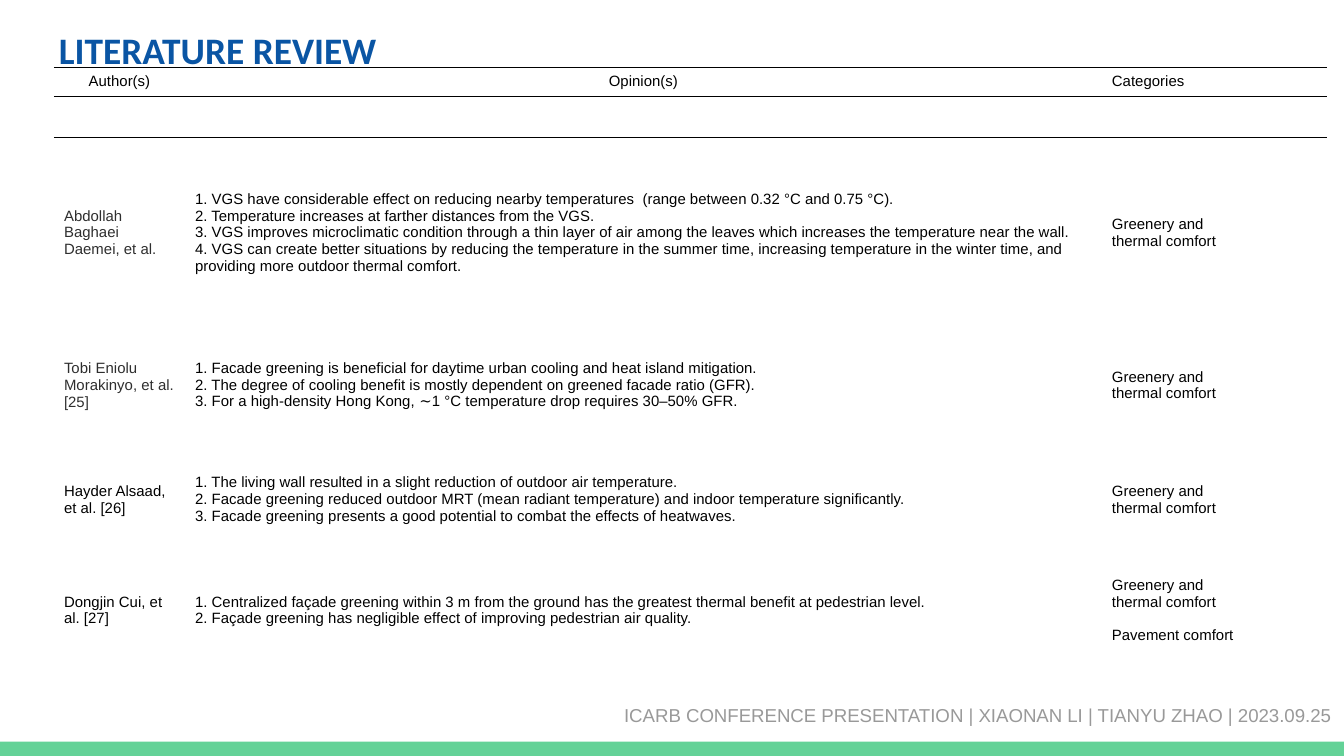
"""Build the literature review slide with its table of authors and opinions."""
import lxml.etree
import pptx
import pptx.dml.color
import pptx.enum.shapes
import pptx.enum.text
import pptx.oxml.ns
import pptx.util

Pt = pptx.util.Pt
Color = pptx.dml.color.RGBColor
Align = pptx.enum.text.PP_ALIGN
Anchor = pptx.enum.text.MSO_ANCHOR
qn = pptx.oxml.ns.qn

BLACK = Color(0x00, 0x00, 0x00)
DARK = Color(0x2E, 0x2E, 0x2E)
BLUE = Color(0x0A, 0x55, 0xA4)
GRAY = Color(0x99, 0x99, 0x99)
GREEN = Color(0x63, 0xD2, 0x97)

COMFORT = ["Greenery and", "thermal comfort"]
HEADS = [("Author(s)", Align.CENTER), ("Opinion(s)", Align.CENTER), ("Categories", Align.LEFT)]
WIDTHS = [70.2, 491.2, 120.6]
HEIGHTS = [15.6, 20.4, 102.2, 61.2, 61.2, 57.6]
RULES = [(0.5, 0.5), (0.5, 0.75), (0.75, 0)]
STUDIES = [
    ("Abdollah Baghaei Daemei, et al.", DARK, [
        "1. VGS have considerable effect on reducing nearby temperatures  (range between 0.32 °C and 0.75 °C).",
        "2. Temperature increases at farther distances from the VGS.",
        "3. VGS improves microclimatic condition through a thin layer of air among the leaves "
        "which increases the temperature near the wall.",
        "4. VGS can create better situations by reducing the temperature in the summer time, "
        "increasing temperature in the winter time, and providing more outdoor thermal comfort.",
    ]),
    ("Tobi Eniolu Morakinyo, et al. [25]", DARK, [
        "1. Facade greening is beneficial for daytime urban cooling and heat island mitigation.",
        "2. The degree of cooling benefit is mostly dependent on greened facade ratio (GFR).",
        [("3. For a high-density Hong Kong, ", "Arial"), ("∼", "Cambria"),
         ("1 °C temperature drop requires 30–50% GFR.", "Arial")],
    ]),
    ("Hayder Alsaad, et al. [26]", BLACK, [
        "1. The living wall resulted in a slight reduction of outdoor air temperature.",
        "2. Facade greening reduced outdoor MRT (mean radiant temperature) and indoor temperature significantly.",
        "3. Facade greening presents a good potential to combat the effects of heatwaves.",
    ]),
    ("Dongjin Cui, et al. [27]", BLACK, [
        "1. Centralized façade greening within 3 m from the ground has the greatest thermal benefit "
        "at pedestrian level.",
        "2. Façade greening has negligible effect of improving pedestrian air quality.",
    ]),
]


class Page:
    """Holds the text style and the current slide."""

    def __init__(self, slide, font="Arial", size=8):
        self.slide, self.font, self.size = slide, font, size

    def put(self, frame, lines, color=BLACK, align=Align.LEFT, size=None, font=None, bold=False):
        """Set each line as a paragraph, run by run."""
        for i, line in enumerate(lines):
            para = frame.add_paragraph() if i else frame.paragraphs[0]
            para.alignment = align
            pairs = [(line, font or self.font)] if isinstance(line, str) else line
            for text, face in pairs:
                run = para.add_run()
                run.text = text
                run.font.name, run.font.size = face, Pt(size or self.size)
                run.font.bold, run.font.color.rgb = bold, color

    def text(self, x, y, w, h, line, **style):
        """Add a text box with one line."""
        frame = self.slide.shapes.add_textbox(Pt(x), Pt(y), Pt(w), Pt(h)).text_frame
        frame.word_wrap = True
        frame.margin_left = frame.margin_right = frame.margin_top = frame.margin_bottom = Pt(7.2)
        self.put(frame, [line], **style)

    def bar(self, x, y, w, h, color):
        """Add a plain filled bar."""
        kind = pptx.enum.shapes.MSO_SHAPE.RECTANGLE
        shape = self.slide.shapes.add_shape(kind, Pt(x), Pt(y), Pt(w), Pt(h))
        shape.shadow.inherit = False
        shape.fill.solid()
        shape.fill.fore_color.rgb = color
        shape.line.fill.background()

    def edge(self, cell, side, width):
        """Draw one cell border, or clear it when the width is zero."""
        props = cell._tc.get_or_add_tcPr()
        line = lxml.etree.SubElement(props, qn("a:ln" + side), w=str(int(Pt(width))))
        if width:
            fill = lxml.etree.SubElement(line, qn("a:solidFill"))
            lxml.etree.SubElement(fill, qn("a:srgbClr"), val=str(BLACK))
        else:
            lxml.etree.SubElement(line, qn("a:noFill"))

    def grid(self, x, y, widths, heights, rules):
        """Add a clear table with horizontal rules around its first rows."""
        frame = self.slide.shapes.add_table(
            len(heights), len(widths), Pt(x), Pt(y), Pt(sum(widths)), Pt(sum(heights)))
        table = frame.table
        table.first_row = table.horz_banding = False
        for col, width in zip(table.columns, widths):
            col.width = Pt(width)
        for i, height in enumerate(heights):
            table.rows[i].height = Pt(height)
            top, base = rules[i] if i < len(rules) else (0, 0)
            for cell in table.rows[i].cells:
                for side, width in zip("LRTB", (0, 0, top, base)):
                    self.edge(cell, side, width)
                cell.fill.background()
                cell.vertical_anchor = Anchor.MIDDLE
                cell.margin_left = cell.margin_right = Pt(5.4)
                cell.margin_top = cell.margin_bottom = 0
        return table


def main():
    """Build and save the slide."""
    deck = pptx.Presentation()
    deck.slide_width, deck.slide_height = Pt(720), Pt(405)
    page = Page(deck.slides.add_slide(deck.slide_layouts[6]))
    page.bar(0, 397.4, 720, 7.6, GREEN)

    table = page.grid(28.9, 36, WIDTHS, HEIGHTS, RULES)
    for col, (head, align) in enumerate(HEADS):
        page.put(table.cell(0, col).text_frame, [head], align=align)
    for row, (author, color, views) in enumerate(STUDIES, 2):
        last = row == len(HEIGHTS) - 1
        topics = COMFORT + ["Pavement comfort"] * last
        page.put(table.cell(row, 0).text_frame, [author], color)
        page.put(table.cell(row, 1).text_frame, views)
        page.put(table.cell(row, 2).text_frame, topics)
    table.cell(row, 2).text_frame.paragraphs[-1].space_before = Pt(9.2)

    page.text(24.5, 7.2, 671, 45.4, "LITERATURE REVIEW", color=BLUE, size=20, font="Calibri", bold=True)
    page.text(322.6, 370.8, 397.4, 26.6,
              "ICARB CONFERENCE PRESENTATION | XIAONAN LI | TIANYU ZHAO | 2023.09.25",
              color=GRAY, size=10, align=Align.RIGHT)
    deck.save("out.pptx")


if __name__ == "__main__":
    main()
